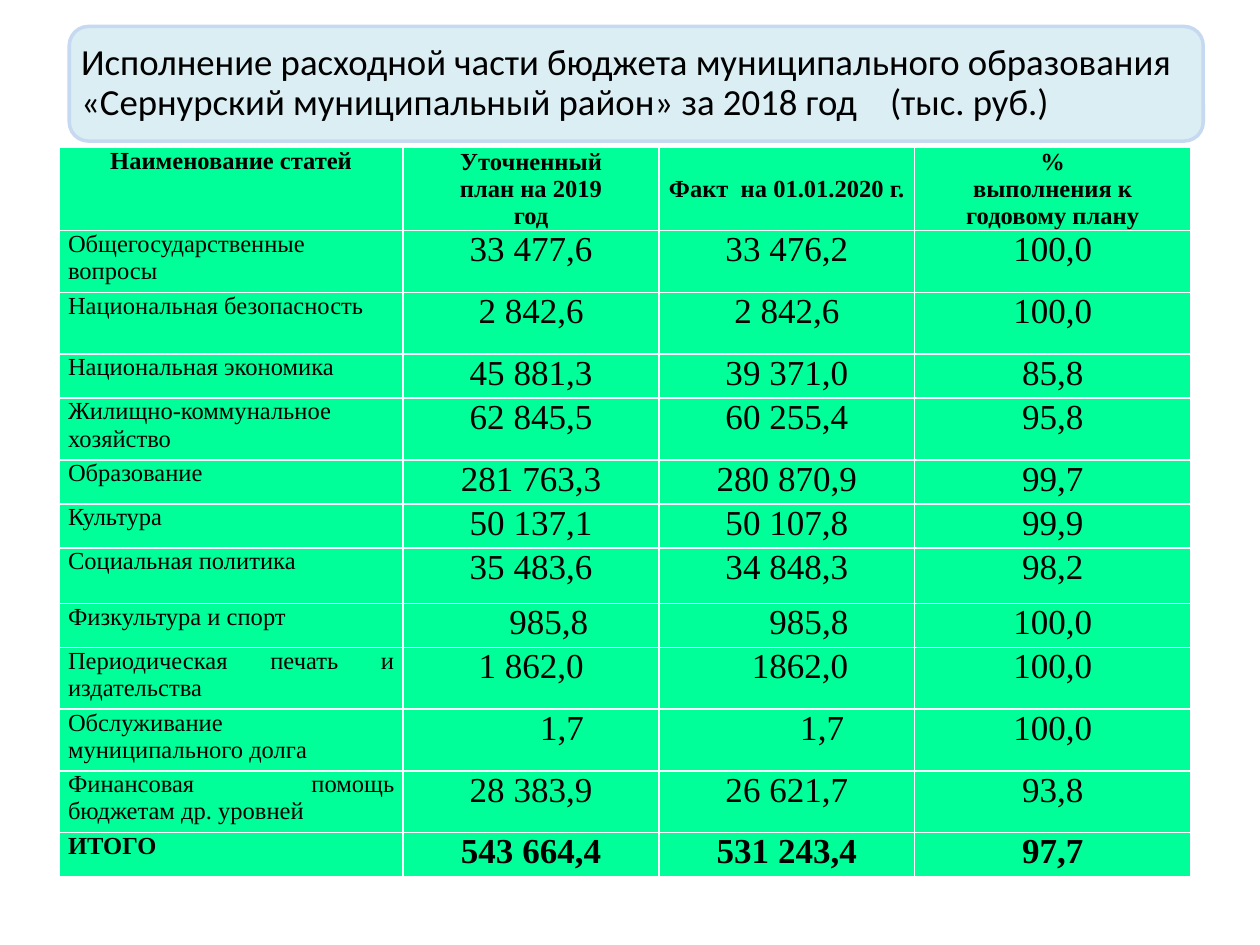
from dataclasses import dataclass

from lxml import etree
from pptx import Presentation
from pptx.dml.color import RGBColor
from pptx.enum.shapes import MSO_SHAPE
from pptx.enum.text import MSO_ANCHOR, PP_ALIGN
from pptx.oxml.ns import qn
from pptx.util import Inches, Pt

LEFT, CENTER, JUSTIFY = PP_ALIGN.LEFT, PP_ALIGN.CENTER, PP_ALIGN.JUSTIFY
TOP, MIDDLE = MSO_ANCHOR.TOP, MSO_ANCHOR.MIDDLE


@dataclass(frozen=True)
class Theme:
    text: RGBColor = RGBColor(0, 0, 0)
    title_fill: RGBColor = RGBColor(0xDB, 0xEE, 0xF4)
    title_line: RGBColor = RGBColor(0xC6, 0xD9, 0xF1)
    cell_fill: RGBColor = RGBColor(0x00, 0xFF, 0x99)
    title_font: str = "Calibri"
    table_font: str = "Times New Roman"
    title_size: Pt = Pt(21)
    label_size: Pt = Pt(14)
    value_size: Pt = Pt(20)


THEME = Theme()


def style_paragraphs(text_frame, font_name, size, alignment, bold=False):
    for paragraph in text_frame.paragraphs:
        paragraph.alignment = alignment
        for run in paragraph.runs:
            run.font.name = font_name
            run.font.size = size
            run.font.bold = bold
            run.font.color.rgb = THEME.text


presentation = Presentation()
presentation.slide_width = Inches(10)
presentation.slide_height = Inches(7.5)
slide = presentation.slides.add_slide(presentation.slide_layouts[6])

# Title banner
banner = slide.shapes.add_shape(
    MSO_SHAPE.ROUNDED_RECTANGLE, Inches(0.55), Inches(0.21), Inches(9), Inches(0.91)
)
banner.shadow.inherit = False
banner.fill.solid()
banner.fill.fore_color.rgb = THEME.title_fill
banner.line.color.rgb = THEME.title_line
banner.line.width = Pt(2)

title = banner.text_frame
title.word_wrap = True
title.vertical_anchor = MIDDLE
title.margin_left = title.margin_right = Inches(0.05)
title.margin_top = title.margin_bottom = Inches(0.05)
title.text = (
    "Исполнение расходной части бюджета муниципального образования "
    "«Сернурский муниципальный район» за 2018 год\t(тыс. руб.)"
)
style_paragraphs(title, THEME.title_font, THEME.title_size, LEFT)
title.paragraphs[0].line_spacing = 0.9
# The tab stop sets the unit apart from the title
tab_list = etree.SubElement(title.paragraphs[0]._p.get_or_add_pPr(), qn("a:tabLst"))
etree.SubElement(tab_list, qn("a:tab"), pos=str(Inches(6.42)), algn="l")

# Budget table
headers = [
    "Наименование статей",
    "Уточненный\nплан на 2019\nгод",
    "Факт  на 01.01.2020 г.",
    "%\nвыполнения к\nгодовому плану",
]
expenses = [
    ("Общегосударственные вопросы", "33 477,6", "33 476,2", "100,0"),
    ("Национальная безопасность", "2 842,6", "2 842,6", "100,0"),
    ("Национальная экономика", "45 881,3", "39 371,0", "85,8"),
    ("Жилищно-коммунальное хозяйство", "62 845,5", "60 255,4", "95,8"),
    ("Образование", "281 763,3", "280 870,9", "99,7"),
    ("Культура", "50 137,1", "50 107,8", "99,9"),
    ("Социальная политика", "35 483,6", "34 848,3", "98,2"),
    ("Физкультура и спорт", "985,8", "985,8", "100,0"),
    ("Периодическая печать и издательства", "1 862,0", "1862,0", "100,0"),
    ("Обслуживание муниципального долга", "1,7", "1,7", "100,0"),
    ("Финансовая помощь бюджетам др. уровней", "28 383,9", "26 621,7", "93,8"),
    ("ИТОГО", "543 664,4", "531 243,4", "97,7"),
]
column_widths = [2.73, 2.03, 2.03, 2.19]
row_heights = [0.66, 0.49, 0.49, 0.35, 0.49, 0.35, 0.35, 0.44, 0.35, 0.49, 0.49, 0.49, 0.35]
side_margin = 0.07
# Extra left margin, by (row, column), of values set right of the centre
value_indents = {(8, 1): 0.28, (8, 2): 0.35, (9, 2): 0.21, (10, 1): 0.49, (10, 2): 0.56}
first_justified_row = 5
total_row = len(expenses)

table = slide.shapes.add_table(
    len(row_heights), len(column_widths),
    Inches(0.47), Inches(1.17), Inches(sum(column_widths)), Inches(sum(row_heights)),
).table
table.horz_banding = False
for column, width in zip(table.columns, column_widths):
    column.width = Inches(width)
for row, height in zip(table.rows, row_heights):
    row.height = Inches(height)

for row_index, values in enumerate([headers, *expenses]):
    for column_index, value in enumerate(values):
        cell = table.cell(row_index, column_index)
        cell.fill.solid()
        cell.fill.fore_color.rgb = THEME.cell_fill
        cell.margin_left = Inches(side_margin + value_indents.get((row_index, column_index), 0))
        cell.margin_right = Inches(side_margin)
        cell.margin_top = cell.margin_bottom = 0
        is_header = row_index == 0
        cell.vertical_anchor = MIDDLE if is_header and column_index else TOP
        if is_header or column_index:
            alignment = CENTER
        else:
            alignment = JUSTIFY if row_index >= first_justified_row else LEFT
        is_value = column_index and not is_header
        cell.text_frame.text = value
        style_paragraphs(
            cell.text_frame, THEME.table_font,
            THEME.value_size if is_value else THEME.label_size,
            alignment, bold=row_index in (0, total_row),
        )

presentation.save("out.pptx")
